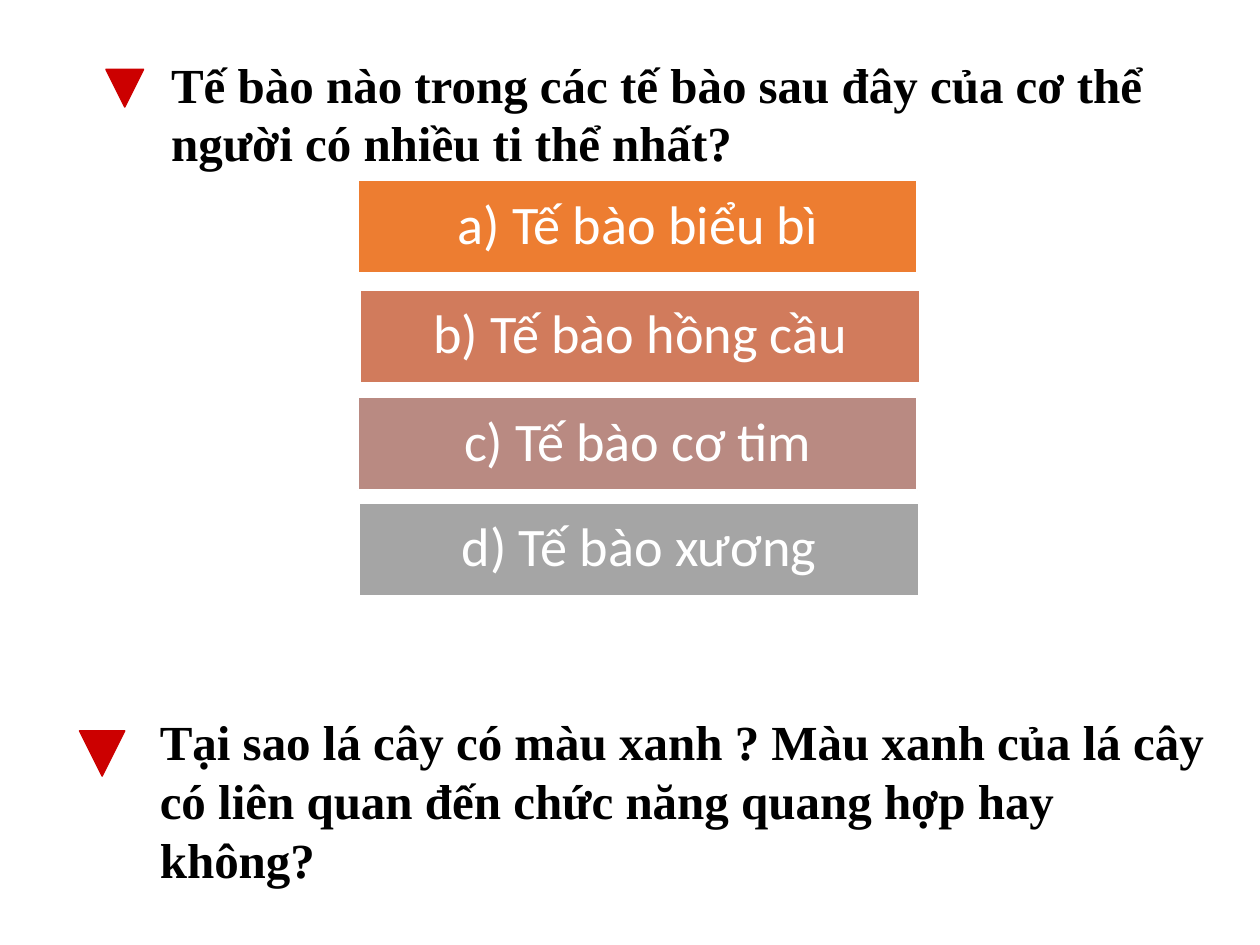
from dataclasses import dataclass

import pptx
import pptx.dml.color
import pptx.enum.shapes
import pptx.enum.text
import pptx.util
from pptx.dml.color import RGBColor
from pptx.enum.shapes import MSO_SHAPE
from pptx.util import Inches

RED = RGBColor(0xCC, 0x00, 0x00)
BLACK = RGBColor(0x00, 0x00, 0x00)
WHITE = RGBColor(0xFF, 0xFF, 0xFF)
ORANGE = RGBColor(0xED, 0x7D, 0x31)
TERRACOTTA = RGBColor(0xD1, 0x7B, 0x5C)
ROSE = RGBColor(0xB9, 0x8A, 0x82)
GRAY = RGBColor(0xA5, 0xA5, 0xA5)

ANSWER_WIDTH = 4.44
ANSWER_HEIGHT = 0.74
ANSWER_INSET = 0.13


@dataclass(frozen=True)
class Question:
    text: str
    left: float
    top: float
    width: float
    height: float
    marker_left: float
    marker_top: float
    marker_size: float


@dataclass(frozen=True)
class Answer:
    text: str
    left: float
    top: float
    color: RGBColor


QUESTIONS = [
    Question("Tế bào nào trong các tế bào sau đây của cơ thể người có nhiều ti thể nhất?",
             1.26, 0.38, 8.25, 1.04, 0.84, 0.55, 0.3),
    Question("Tại sao lá cây có màu xanh ? Màu xanh của lá cây có liên quan đến "
             "chức năng quang hợp hay không?",
             1.17, 5.6, 8.49, 1.51, 0.63, 5.8, 0.36),
]

ANSWERS = [
    Answer("a) Tế bào biểu bì", 2.84, 1.43, ORANGE),
    Answer("b) Tế bào hồng cầu", 2.86, 2.3, TERRACOTTA),
    Answer("c) Tế bào cơ tim", 2.84, 3.15, ROSE),
    Answer("d) Tế bào xương", 2.85, 3.99, GRAY),
]


def add_filled_shape(page, kind: MSO_SHAPE, left: float, top: float, width: float,
                     height: float, fill: RGBColor, line: RGBColor, line_width: float):
    shape = page.shapes.add_shape(kind, Inches(left), Inches(top), Inches(width), Inches(height))
    shape.shadow.inherit = False
    shape.fill.solid()
    shape.fill.fore_color.rgb = fill
    shape.line.color.rgb = line
    shape.line.width = pptx.util.Pt(line_width)
    return shape


def write_text(frame, text: str, font: str, size: float, color: RGBColor, bold: bool):
    frame.word_wrap = True
    frame.text = text
    para = frame.paragraphs[0]
    span = para.runs[0]
    span.font.name = font
    span.font.size = pptx.util.Pt(size)
    span.font.color.rgb = color
    span.font.bold = bold
    return para


def draw_question(page, question: Question) -> None:
    marker = add_filled_shape(page, MSO_SHAPE.ISOSCELES_TRIANGLE, question.marker_left,
                              question.marker_top, question.marker_size,
                              question.marker_size, RED, RED, 0.75)
    marker.rotation = 180
    box = page.shapes.add_textbox(Inches(question.left), Inches(question.top),
                                  Inches(question.width), Inches(question.height))
    write_text(box.text_frame, question.text, "Times New Roman", 28, BLACK, True)
    box.text_frame.auto_size = pptx.enum.text.MSO_AUTO_SIZE.SHAPE_TO_FIT_TEXT


def draw_answer(page, answer: Answer) -> None:
    box = add_filled_shape(page, MSO_SHAPE.RECTANGLE, answer.left, answer.top,
                           ANSWER_WIDTH, ANSWER_HEIGHT, answer.color, WHITE, 1)
    frame = box.text_frame
    frame.margin_left = frame.margin_right = Inches(ANSWER_INSET)
    frame.margin_top = frame.margin_bottom = Inches(ANSWER_INSET)
    frame.vertical_anchor = pptx.enum.text.MSO_ANCHOR.MIDDLE
    para = write_text(frame, answer.text, "Calibri", 31, WHITE, False)
    para.alignment = pptx.enum.text.PP_ALIGN.CENTER
    para.line_spacing = 0.9


def main() -> None:
    deck = pptx.Presentation()
    deck.slide_width = Inches(10)
    deck.slide_height = Inches(7.5)
    page = deck.slides.add_slide(deck.slide_layouts[6])
    for question in QUESTIONS:
        draw_question(page, question)
    for answer in ANSWERS:
        draw_answer(page, answer)
    deck.save("out.pptx")


if __name__ == "__main__":
    main()
